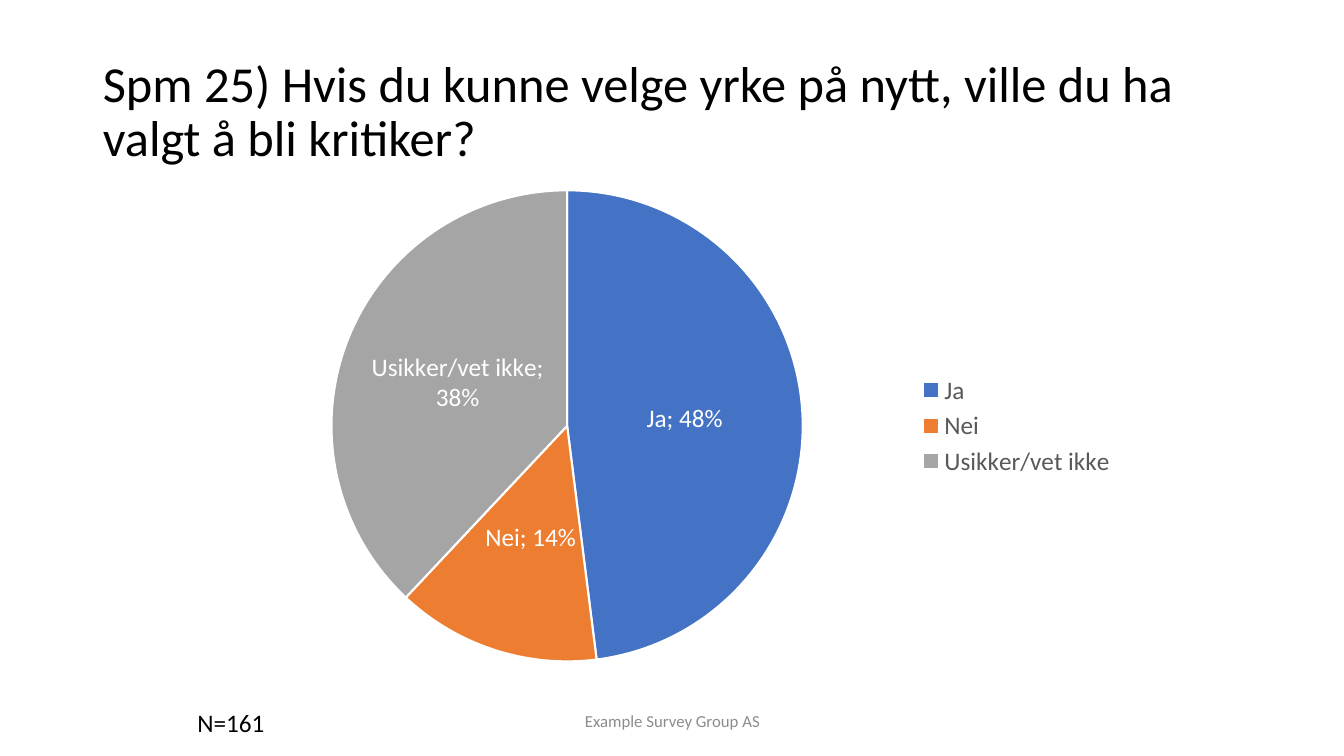
from dataclasses import dataclass

from lxml.etree import SubElement
from pptx import Presentation
from pptx.chart.chart import Chart
from pptx.chart.data import CategoryChartData
from pptx.dml.color import RGBColor
from pptx.enum.chart import XL_CHART_TYPE as ChartType
from pptx.enum.chart import XL_LABEL_POSITION as LabelPosition
from pptx.enum.chart import XL_LEGEND_POSITION as LegendPosition
from pptx.enum.text import MSO_ANCHOR as Anchor
from pptx.enum.text import MSO_AUTO_SIZE as AutoSize
from pptx.enum.text import PP_ALIGN as Align
from pptx.oxml.ns import qn
from pptx.slide import Slide
from pptx.text.text import Font, TextFrame
from pptx.util import Inches, Pt


@dataclass(frozen=True)
class Theme:
    font: str = "Calibri"
    ink: str = "000000"
    muted: str = "8C8C8C"
    legend: str = "595959"
    white: str = "FFFFFF"
    title_size: int = 36
    body_size: int = 18
    footer_size: int = 12


@dataclass(frozen=True)
class Answer:
    label: str
    share: float
    color: str


@dataclass(frozen=True)
class Caption:
    text: str
    left: float
    top: float
    width: float
    height: float
    size: int
    color: str
    align: Align = Align.LEFT
    anchor: Anchor = Anchor.TOP
    wrap: bool = True


THEME = Theme()
QUESTION = "Spm 25) Hvis du kunne velge yrke på nytt, ville du ha valgt å bli kritiker?"
ANSWERS = [
    Answer("Ja", 0.48, "4472C4"),
    Answer("Nei", 0.14, "ED7D31"),
    Answer("Usikker/vet ikke", 0.38, "A5A5A5"),
]
CAPTIONS = [
    Caption("Example Survey Group AS", 4.42, 6.95, 4.5, 0.4, THEME.footer_size,
            THEME.muted, align=Align.CENTER, anchor=Anchor.MIDDLE),
    Caption("N=161", 1.86, 6.97, 0.87, 0.4, THEME.body_size, THEME.ink, wrap=False),
]


def format_font(font: Font, size: int, color: str) -> None:
    font.name = THEME.font
    font.size = Pt(size)
    font.color.rgb = RGBColor.from_string(color)


def write_text(frame: TextFrame, text: str, *, size: int, color: str,
               align: Align = Align.LEFT, anchor: Anchor = Anchor.TOP,
               wrap: bool = True, line_spacing: float | None = None) -> None:
    frame.word_wrap = wrap
    frame.auto_size = AutoSize.NONE if wrap else AutoSize.SHAPE_TO_FIT_TEXT
    frame.vertical_anchor = anchor
    paragraph = frame.paragraphs[0]
    paragraph.alignment = align
    paragraph.line_spacing = line_spacing
    run = paragraph.add_run()
    run.text = text
    format_font(run.font, size, color)


def add_title(slide: Slide) -> None:
    title = slide.shapes.title
    title.left, title.top = Inches(0.92), Inches(0.4)
    title.width, title.height = Inches(11.5), Inches(1.45)
    write_text(title.text_frame, QUESTION, size=THEME.title_size, color=THEME.ink,
               anchor=Anchor.MIDDLE, line_spacing=0.9)


def add_caption(slide: Slide, caption: Caption) -> None:
    box = slide.shapes.add_textbox(Inches(caption.left), Inches(caption.top),
                                   Inches(caption.width), Inches(caption.height))
    write_text(box.text_frame, caption.text, size=caption.size, color=caption.color,
               align=caption.align, anchor=caption.anchor, wrap=caption.wrap)


def label_slices(chart: Chart) -> None:
    """Show answer and share in the middle of each slice, parted by a semicolon."""
    plot = chart.plots[0]
    plot.has_data_labels = True
    labels = plot.data_labels
    labels.show_category_name = True
    labels.show_value = True
    labels.show_percentage = False
    labels.show_legend_key = False
    labels.number_format = "0%"
    labels.number_format_is_linked = False
    labels.position = LabelPosition.CENTER
    format_font(labels.font, THEME.body_size, THEME.white)
    dlbls = labels._element
    separator = SubElement(dlbls, qn("c:separator"))
    separator.text = "; "
    bubble_flag = dlbls.find(qn("c:showBubbleSize"))
    if bubble_flag is not None:
        bubble_flag.addnext(separator)


def add_answer_pie(slide: Slide) -> None:
    data = CategoryChartData(number_format="0%")
    data.categories = [answer.label for answer in ANSWERS]
    data.add_series("Series 1", [answer.share for answer in ANSWERS])
    chart = slide.shapes.add_chart(ChartType.PIE, Inches(2.17), Inches(1.75),
                                   Inches(9), Inches(4.95), data).chart
    format_font(chart.font, THEME.body_size, THEME.ink)
    chart.has_title = False
    chart.has_legend = True
    chart.legend.position = LegendPosition.RIGHT
    chart.legend.include_in_layout = False
    format_font(chart.legend.font, THEME.body_size, THEME.legend)

    chart.plots[0].vary_by_categories = True
    series = chart.plots[0].series[0]
    for index, answer in enumerate(ANSWERS):
        pie_slice = series.points[index].format
        pie_slice.fill.solid()
        pie_slice.fill.fore_color.rgb = RGBColor.from_string(answer.color)
        pie_slice.line.color.rgb = RGBColor.from_string(THEME.white)
        pie_slice.line.width = Pt(1.5)
    label_slices(chart)


def main() -> None:
    deck = Presentation()
    deck.slide_width, deck.slide_height = Inches(13.33), Inches(7.5)
    slide = deck.slides.add_slide(deck.slide_layouts.get_by_name("Title Only"))
    add_title(slide)
    add_answer_pie(slide)
    for caption in CAPTIONS:
        add_caption(slide, caption)
    deck.save("out.pptx")


if __name__ == "__main__":
    main()
